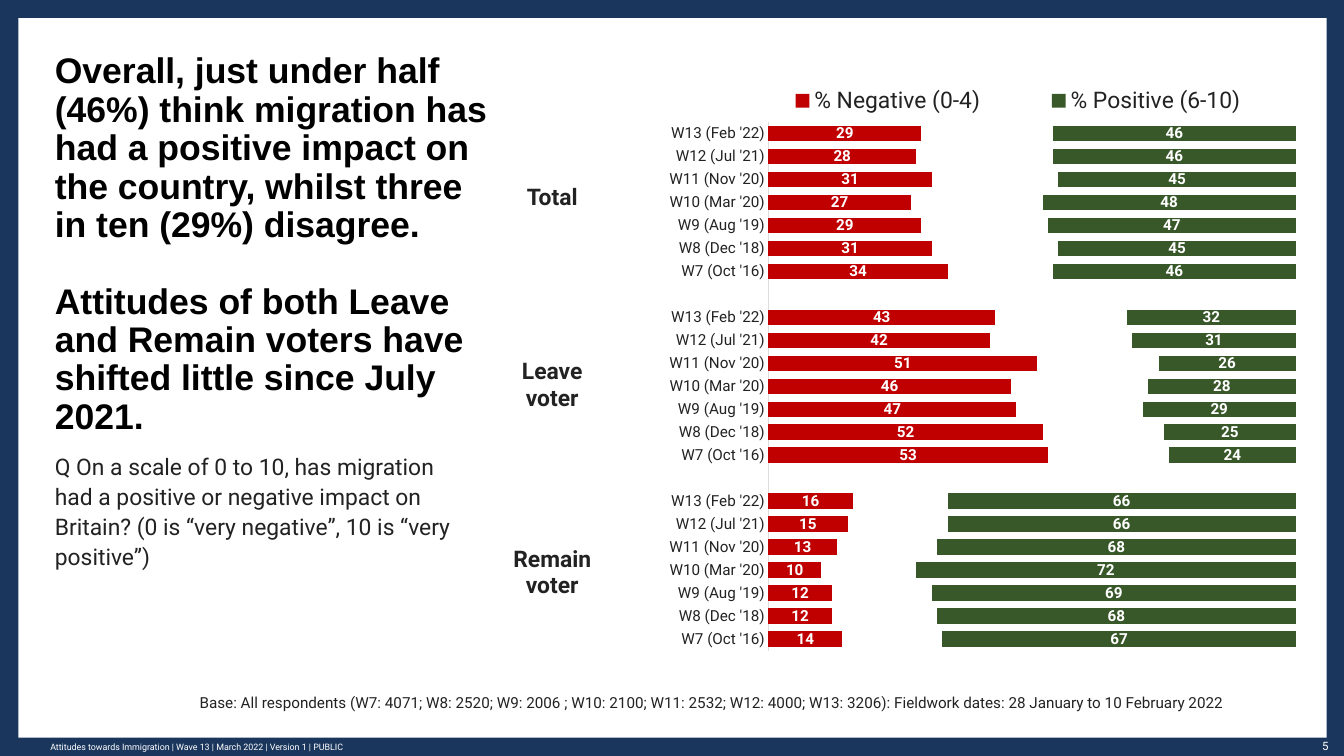
from pptx import Presentation
from pptx.chart.data import CategoryChartData
from pptx.dml.color import RGBColor
from pptx.enum.chart import XL_CHART_TYPE, XL_LEGEND_POSITION, XL_TICK_MARK
from pptx.enum.shapes import MSO_SHAPE
from pptx.enum.text import MSO_ANCHOR, MSO_AUTO_SIZE, PP_ALIGN
from pptx.oxml import parse_xml
from pptx.oxml.ns import nsdecls
from pptx.util import Inches, Pt

LEFT, CENTER, RIGHT = PP_ALIGN.LEFT, PP_ALIGN.CENTER, PP_ALIGN.RIGHT
TOP, MIDDLE, BOTTOM = MSO_ANCHOR.TOP, MSO_ANCHOR.MIDDLE, MSO_ANCHOR.BOTTOM
NAVY, WHITE, INK, BLACK = "1B365D", "FFFFFF", "222223", "000000"
RED, GREEN, AXIS_GREY = "C00000", "39582A", "DDDDDE"

WAVES = ["W13 (Feb '22)", "W12 (Jul '21)", "W11 (Nov '20)", "W10 (Mar '20)",
         "W9 (Aug '19)", "W8 (Dec '18)", "W7 (Oct '16)"]
# Voter group: (negative shares, positive shares), one per wave
ATTITUDES = {
    "Total": ([29, 28, 31, 27, 29, 31, 34], [46, 46, 45, 48, 47, 45, 46]),
    "Leave voter": ([43, 42, 51, 46, 47, 52, 53], [32, 31, 26, 28, 29, 25, 24]),
    "Remain voter": ([16, 15, 13, 10, 12, 12, 14], [66, 66, 68, 72, 69, 68, 67]),
}
HEADLINES = [
    "Overall, just under half (46%) think migration has had a positive impact "
    "on the country, whilst three in ten (29%) disagree.",
    "Attitudes of both Leave and Remain voters have shifted little since July 2021.",
]
QUESTION = ("Q On a scale of 0 to 10, has migration had a positive or negative impact "
            "on Britain? (0 is “very negative”, 10 is “very positive”)")
BASE = ("Base: All respondents (W7: 4071; W8: 2520; W9: 2006 ; W10: 2100; W11: 2532; "
        "W12: 4000; W13: 3206): Fieldwork dates: 28 January to 10 February 2022")
FOOTER = "Attitudes towards Immigration | Wave 13 | March 2022 | Version 1 | PUBLIC"


def rgb(value):
    return RGBColor.from_string(value)


def set_font(font, size, color, bold=False, name="Roboto"):
    font.name, font.size, font.bold = name, Pt(size), bold
    font.color.rgb = rgb(color)


def place(shape, box):
    shape.left, shape.top, shape.width, shape.height = (Inches(v) for v in box)


def prepare_frame(frame, anchor):
    frame.word_wrap = True
    frame.auto_size = MSO_AUTO_SIZE.NONE
    frame.vertical_anchor = anchor
    frame.margin_left = frame.margin_right = frame.margin_top = frame.margin_bottom = 0


def add_label(slide, box, text, size, color, align=LEFT, anchor=TOP):
    frame = slide.shapes.add_textbox(*(Inches(v) for v in box)).text_frame
    prepare_frame(frame, anchor)
    paragraph = frame.paragraphs[0]
    paragraph.text, paragraph.alignment = text, align
    set_font(paragraph.font, size, color)


def add_page_frame(slide, box):
    """White panel on the navy page, with the footer and page number below it."""
    left, top, width, height = box
    slide.background.fill.solid()
    slide.background.fill.fore_color.rgb = rgb(NAVY)
    panel = slide.shapes.add_shape(MSO_SHAPE.RECTANGLE, *(Inches(v) for v in box))
    panel.shadow.inherit = False
    panel.fill.solid()
    panel.fill.fore_color.rgb = rgb(WHITE)
    panel.line.fill.background()
    # Send the panel behind the placeholders
    slide.shapes._spTree.insert(2, panel._element)
    bottom = top + height
    add_label(slide, (left + 0.35, bottom, 5.35, 0.2), FOOTER, 7, WHITE, anchor=MIDDLE)
    add_label(slide, (left + width - 0.45, bottom + 0.02, 0.47, 0.17), "5", 9, WHITE, RIGHT)


def fill_headline(title, box):
    place(title, box)
    frame = title.text_frame
    prepare_frame(frame, BOTTOM)
    for index, text in enumerate(HEADLINES):
        paragraph = frame.add_paragraph() if index else frame.paragraphs[0]
        paragraph.text, paragraph.alignment = text, LEFT
        paragraph.line_spacing = 0.9
        paragraph.space_before = Pt(30 if index else 0)
        set_font(paragraph.font, 28, BLACK, bold=True, name="Arial")


def fill_question(body, box):
    place(body, box)
    prepare_frame(body.text_frame, TOP)
    paragraph = body.text_frame.paragraphs[0]
    paragraph.text, paragraph.alignment = QUESTION, LEFT
    paragraph.line_spacing, paragraph.space_before = 1.1, Pt(0)
    properties = paragraph._p.get_or_add_pPr()
    properties.set("marL", "0")
    properties.set("indent", "0")
    properties.append(parse_xml(f"<a:buNone {nsdecls('a')}/>"))
    set_font(paragraph.font, 18, INK)


def add_group_names(slide, box):
    table = slide.shapes.add_table(len(ATTITUDES), 1, *(Inches(v) for v in box)).table
    table.first_row = table.horz_banding = False
    for row, group in enumerate(ATTITUDES):
        cell = table.cell(row, 0)
        cell.fill.background()
        cell.vertical_anchor = MIDDLE
        paragraph = cell.text_frame.paragraphs[0]
        paragraph.text, paragraph.alignment = group, CENTER
        set_font(paragraph.font, 18, INK, bold=True)


def attitude_data():
    """Stack negative, remainder and positive shares, with an empty row between groups."""
    waves, negative, neutral, positive = [], [], [], []
    for group_negative, group_positive in ATTITUDES.values():
        if waves:
            waves.append("")
            for shares in (negative, neutral, positive):
                shares.append(None)
        waves += WAVES
        negative += group_negative
        neutral += [100 - n - p for n, p in zip(group_negative, group_positive)]
        positive += group_positive
    data = CategoryChartData()
    data.categories = waves
    data.add_series("% Negative (0-4)", negative)
    data.add_series(" ", neutral)
    data.add_series("% Positive (6-10)", positive)
    return data


def layout_xml(x, y, w, h, inner=False):
    target = '<c:layoutTarget val="inner"/>' if inner else ""
    return parse_xml(
        f'<c:layout {nsdecls("c")}><c:manualLayout>{target}'
        '<c:xMode val="edge"/><c:yMode val="edge"/>'
        f'<c:x val="{x}"/><c:y val="{y}"/><c:w val="{w}"/><c:h val="{h}"/>'
        '</c:manualLayout></c:layout>')


def set_layout(element, layout, predecessor=None):
    for old in element.findall(layout.tag):
        element.remove(old)
    if predecessor is None:
        element.insert(0, layout)
    else:
        predecessor.addnext(layout)


def add_attitude_chart(slide, box):
    chart = slide.shapes.add_chart(XL_CHART_TYPE.BAR_STACKED, *(Inches(v) for v in box),
                                   attitude_data()).chart
    chart.has_title = False
    set_font(chart.font, 10, INK)

    waves = chart.category_axis
    waves.reverse_order = True
    waves.major_tick_mark = waves.minor_tick_mark = XL_TICK_MARK.NONE
    waves.format.line.color.rgb = rgb(AXIS_GREY)
    waves.format.line.width = Pt(0.75)
    set_font(waves.tick_labels.font, 12, INK)
    shares = chart.value_axis
    shares.minimum_scale, shares.maximum_scale = 0, 100
    shares.has_major_gridlines = shares.visible = False

    plot = chart.plots[0]
    plot.gap_width, plot.overlap, plot.vary_by_categories = 50, 100, False
    for series, color in zip(plot.series, (RED, None, GREEN)):
        series.invert_if_negative = False
        if color is None:
            series.format.fill.background()
            continue
        series.format.fill.solid()
        series.format.fill.fore_color.rgb = rgb(color)
        series.data_labels.show_value = True
        set_font(series.data_labels.font, 12, WHITE, bold=True)

    chart.has_legend = True
    legend = chart.legend
    legend.position, legend.include_in_layout = XL_LEGEND_POSITION.BOTTOM, False
    set_font(legend.font, 18, INK)
    set_layout(legend._element, layout_xml(0.25, 0.04, 0.68, 0.05),
               legend._element.find("{*}legendPos"))
    set_layout(chart._chartSpace.chart.plotArea,
               layout_xml(0.234, 0.098, 0.752, 0.83, inner=True))


def main():
    deck = Presentation()
    deck.slide_width, deck.slide_height = Inches(14.7), Inches(8.27)
    slide = deck.slides.add_slide(deck.slide_layouts[1])
    add_page_frame(slide, (0.2, 0.2, 14.31, 7.87))
    fill_headline(slide.shapes.title, (0.6, 2.21, 4.87, 2.57))
    fill_question(slide.placeholders[1], (0.6, 4.92, 4.55, 1.31))
    add_attitude_chart(slide, (6.61, 0.65, 7.67, 6.97))
    add_group_names(slide, (5.47, 1.14, 1.14, 6.15))
    add_label(slide, (1.34, 7.58, 12.05, 0.2), BASE, 12, INK, RIGHT)
    deck.save("out.pptx")


if __name__ == "__main__":
    main()
